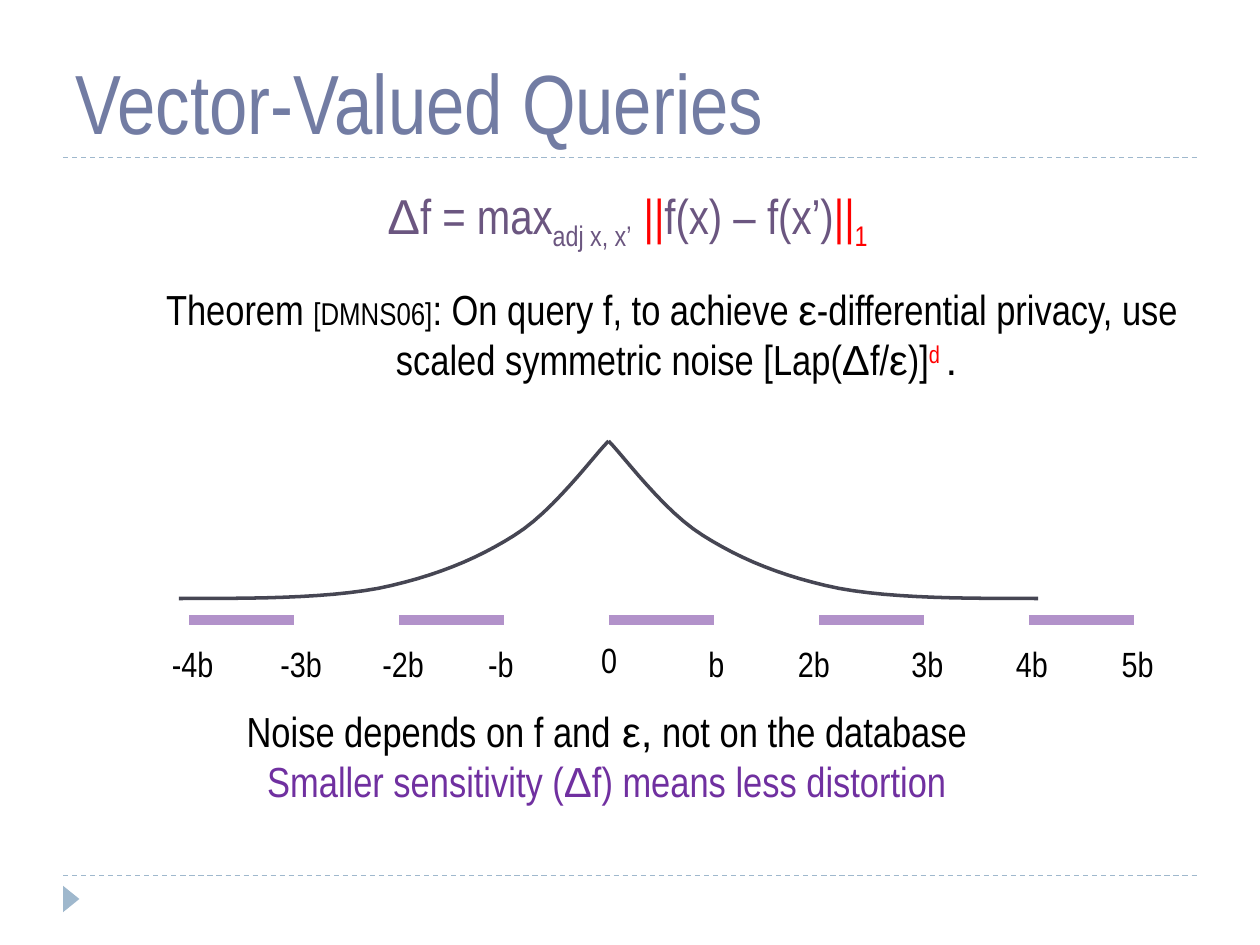
from lxml.etree import SubElement
from pptx import Presentation
from pptx.dml.color import RGBColor
from pptx.enum.dml import MSO_LINE as Dash
from pptx.enum.shapes import MSO_CONNECTOR as Conn, MSO_SHAPE as Shape
from pptx.enum.text import MSO_ANCHOR as Anchor, MSO_AUTO_SIZE as Auto, PP_ALIGN as Align
from pptx.oxml.ns import qn
from pptx.util import Inches, Pt

NARROW, WIDE = "Arial Narrow", "Arial"
BLACK, RED, PLUM, VIOLET = "000000", "FF0000", "6B5680", "7030A0"
SLATE, SKY, DARK, LILAC = "727CA3", "9FB8CD", "464653", "B292CA"

TITLE = "Vector-Valued Queries"
greek = {"font": WIDE}
red = {"color": RED}

FORMULA = [[
    ("Δ", greek), ("f = max", {}), ("adj x, x’  ", {"base": -25}),
    ("||", red), ("f(x) – f(x’)", {}), ("||", red),
    ("1", {"color": RED, "base": -25}),
]]
THEOREM = [
    [("Theorem ", {}), ("[DMNS06]", {"size": 18}),
     (": On query f, to achieve ", {}), ("ε", greek),
     ("-differential privacy, use ", {})],
    [("scaled symmetric noise [Lap(", {}), ("Δ", greek), ("f/", {}),
     ("ε", greek), (")]", {}), ("d ", {"color": RED, "base": 30}), (".", greek)],
]
violet = {"color": VIOLET}
NOTE = [
    [("Noise depends on f and", {}), (" ε,", greek), (" not on the database", {})],
    [("Smaller sensitivity (", violet), ("Δ", {"color": VIOLET, "font": WIDE}),
     ("f) means less distortion", violet)],
]
TEXTS = [
    (FORMULA, (2.87, 1.42, 4.22, 0.57), 28, PLUM),
    (THEOREM, (1.14, 2.2, 8.46, 0.91), 24, BLACK),
    (NOTE, (1.76, 5.55, 6.11, 0.91), 24, BLACK),
]
LABELS = [
    ("-4b", 1.26, 0.54), ("-3b", 2.12, 0.54), ("-2b", 2.93, 0.54),
    ("-b", 3.77, 0.41), ("0", 4.65, 0.37), ("b", 5.52, 0.33),
    ("2b", 6.23, 0.46), ("3b", 7.13, 0.46), ("4b", 7.96, 0.46),
    ("5b", 8.8, 0.46),
]
CURVE = [
    [(1.42, 4.75), (1.99, 4.75), (2.56, 4.75), (3, 4.67)],
    [(3, 4.67), (3.44, 4.58), (3.78, 4.44), (4.08, 4.25)],
    [(4.08, 4.25), (4.39, 4.06), (4.71, 3.62), (4.83, 3.5)],
]
PEAK, STEPS = 4.83, 12
BAR, FIRST, COUNT = 5 / 6, 1.5, 5


def rgb(code):
    return RGBColor.from_string(code)


def write(frame, paras, size=20, color=BLACK, align=Align.CENTER):
    for i, runs in enumerate(paras):
        para = frame.paragraphs[0] if i == 0 else frame.add_paragraph()
        para.alignment = align
        for text, look in runs:
            run = para.add_run()
            run.text = text
            run.font.name = look.get("font", NARROW)
            run.font.size = Pt(look.get("size", size))
            run.font.color.rgb = rgb(look.get("color", color))
            if "base" in look:
                run._r.get_or_add_rPr().set("baseline", str(look["base"] * 1000))


def label(slide, paras, box, **look):
    frame = slide.shapes.add_textbox(*map(Inches, box)).text_frame
    frame.word_wrap = False
    frame.auto_size = Auto.SHAPE_TO_FIT_TEXT
    write(frame, paras, **look)


def rule(slide, left, right, y, color, width, dash=None):
    ends = map(Inches, (left, y, right, y))
    line = slide.shapes.add_connector(Conn.STRAIGHT, *ends)
    line.line.color.rgb = rgb(color)
    line.line.width = Pt(width)
    if dash:
        line.line.dash_style = dash
    SubElement(line._element.spPr, qn("a:effectLst"))


def bezier(pts, t):
    while len(pts) > 1:
        pts = [tuple(a + (b - a) * t for a, b in zip(p, q))
               for p, q in zip(pts, pts[1:])]
    return pts[0]


def trace(slide, pts):
    pts = [(Inches(x), Inches(y)) for x, y in pts]
    path = slide.shapes.build_freeform(*pts[0])
    path.add_line_segments(pts[1:], close=False)
    form = path.convert_to_shape()
    form.shadow.inherit = False
    form.fill.background()
    form.line.color.rgb = rgb(DARK)
    form.line.width = Pt(2)


def main():
    deck = Presentation()
    deck.slide_width, deck.slide_height = Inches(10), Inches(7.5)
    slide = deck.slides.add_slide(deck.slide_layouts[5])

    for y in (6.95, 1.25):
        rule(slide, 0.5, 9.5, y, SKY, 0.75, Dash.DASH)
    box = map(Inches, (0.46, 7.07, 0.21, 0.13))
    mark = slide.shapes.add_shape(Shape.ISOSCELES_TRIANGLE, *box)
    mark.rotation = 90
    mark.shadow.inherit = False
    mark.fill.solid()
    mark.fill.fore_color.rgb = rgb(SKY)
    mark.line.fill.background()

    title = slide.shapes.title
    title.left, title.top, title.width, title.height = map(Inches, (0.5, 0.17, 9, 1.08))
    frame = title.text_frame
    frame.auto_size = Auto.NONE
    frame.vertical_anchor = Anchor.BOTTOM
    write(frame, [[(TITLE, {})]], size=48, color=SLATE, align=Align.LEFT)

    half = [CURVE[0][0]]
    half += [bezier(part, n / STEPS) for part in CURVE for n in range(1, STEPS + 1)]
    trace(slide, half)
    trace(slide, [(2 * PEAK - x, y) for x, y in half])

    for n in range(COUNT):
        left = FIRST + 2 * n * BAR
        rule(slide, left, left + BAR, 4.92, LILAC, 6)

    for paras, box, size, color in TEXTS:
        label(slide, paras, box, size=size, color=color)
    for text, left, width in LABELS:
        top = 5.02 if text == "0" else 5.05
        label(slide, [[(text, {})]], (left, top, width, 0.44))

    deck.save("out.pptx")


if __name__ == "__main__":
    main()
